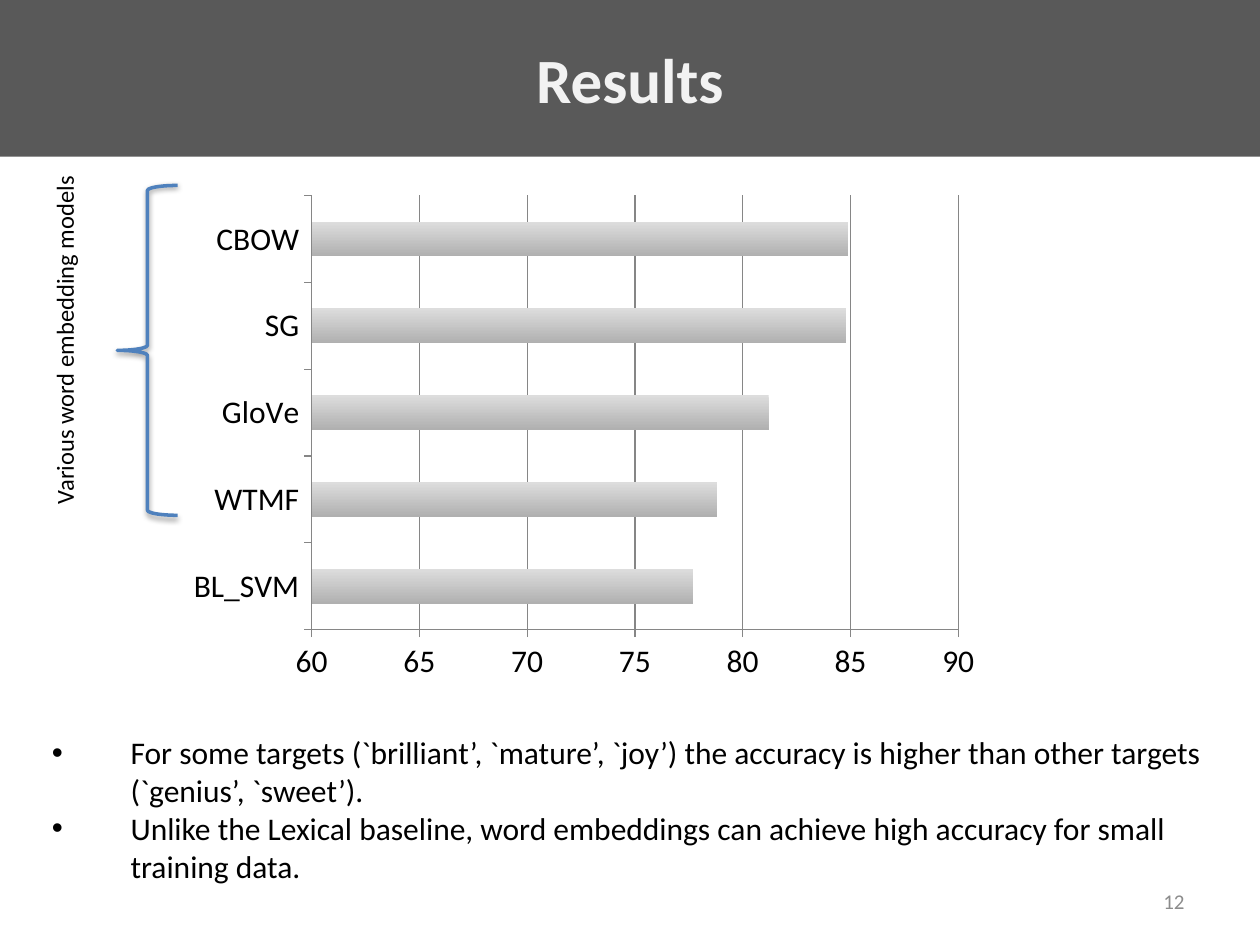
from lxml.etree import SubElement
from pptx import Presentation
from pptx.chart.data import CategoryChartData
from pptx.dml.color import RGBColor
from pptx.enum.chart import XL_CHART_TYPE as CHART, XL_TICK_MARK as TICK
from pptx.enum.shapes import MSO_SHAPE as SHAPE
from pptx.enum.text import MSO_ANCHOR as ANCHOR, PP_ALIGN as ALIGN
from pptx.oxml.ns import qn
from pptx.util import Pt

FONT = "Calibri"
COLORS = {
    "banner": "595959", "title": "F2F2F2", "text": "000000", "number": "8C8C8C",
    "brace": "4F81BD", "axis": "868686", "bar_top": "DDDDDD", "bar_bottom": "B0B0B0",
}
ACCURACY = {"BL_SVM": 77.7, "WTMF": 78.8, "GloVe": 81.2, "SG": 84.8, "CBOW": 84.9}
FINDINGS = [
    "For some targets (`brilliant’, `mature’, `joy’) the accuracy is higher "
    "than other targets (`genius’, `sweet’).",
    "Unlike the Lexical baseline, word embeddings can achieve high accuracy "
    "for small training data.",
]


def rgb(name):
    return RGBColor.from_string(COLORS[name])


def box(*lengths):
    return [Pt(v) for v in lengths]


def style(font, size, color, bold=False):
    font.name, font.size, font.bold = FONT, Pt(size), bold
    font.color.rgb = rgb(color)


def write(sp, lines, size, color, align=ALIGN.LEFT, anchor=ANCHOR.TOP, bold=False, wrap=True):
    tf = sp.text_frame
    tf.text = "\n".join(lines)
    tf.word_wrap, tf.vertical_anchor = wrap, anchor
    for p in tf.paragraphs:
        p.alignment = align
        for r in p.runs:
            style(r.font, size, color, bold)


def add_text(s, at, lines, size, color, **options):
    sp = s.shapes.add_textbox(*box(*at))
    write(sp, lines, size, color, **options)
    return sp


def add_banner(s, text):
    sp = s.shapes.add_shape(SHAPE.RECTANGLE, *box(0, -0.5, 720, 90))
    sp.shadow.inherit = False
    sp.fill.solid()
    sp.fill.fore_color.rgb = rgb("banner")
    sp.line.fill.background()
    write(sp, [text], 36, "title", ALIGN.CENTER, ANCHOR.MIDDLE, bold=True)


def add_brace(s, at):
    """Left brace with a soft shadow below it."""
    sp = s.shapes.add_shape(SHAPE.LEFT_BRACE, *box(*at))
    sp.fill.background()
    sp.line.color.rgb = rgb("brace")
    sp.line.width = Pt(2)
    sp.shadow.inherit = False
    effects = sp._element.spPr.find(qn("a:effectLst"))
    shadow = SubElement(effects, qn("a:outerShdw"), blurRad=str(Pt(3.1)),
                        dist=str(Pt(1.6)), dir="5400000", rotWithShape="0")
    color = SubElement(shadow, qn("a:srgbClr"), val=COLORS["text"])
    SubElement(color, qn("a:alpha"), val="38000")


def add_bar_chart(s, at):
    data = CategoryChartData()
    data.categories = list(ACCURACY)
    data.add_series("Series 1", list(ACCURACY.values()))
    chart = s.shapes.add_chart(CHART.BAR_CLUSTERED, *box(*at), data).chart
    chart.has_legend = chart.has_title = False
    style(chart.font, 18, "text")

    values = chart.value_axis
    values.minimum_scale, values.maximum_scale, values.major_unit = 60, 90, 5
    values.has_major_gridlines = True
    for axis in (chart.category_axis, values):
        axis.major_tick_mark = TICK.OUTSIDE
    for part in (chart.category_axis, values, values.major_gridlines):
        part.format.line.color.rgb = rgb("axis")
        part.format.line.width = Pt(0.75)

    plot = chart.plots[0]
    plot.gap_width, plot.vary_by_categories = 150, False
    fill = plot.series[0].format.fill
    fill.gradient()
    fill.gradient_angle = 270
    for stop, name in zip(fill.gradient_stops, ("bar_top", "bar_bottom")):
        stop.color.rgb = rgb(name)


def add_bullets(s, at, lines):
    sp = add_text(s, at, lines, 18, "text")
    for p in sp.text_frame.paragraphs:
        pPr = p._p.get_or_add_pPr()
        pPr.set("marL", str(Pt(45)))
        pPr.set("indent", str(Pt(-45)))
        SubElement(pPr, qn("a:buFont"), typeface="Arial")
        SubElement(pPr, qn("a:buChar"), char="•")


def main():
    prs = Presentation()
    prs.slide_width, prs.slide_height = Pt(720), Pt(540)
    s = prs.slides.add_slide(prs.slide_layouts[6])
    add_banner(s, "Results")
    add_text(s, (516, 500.5, 168, 28.75), ["12"], 12, "number",
             align=ALIGN.RIGHT, anchor=ANCHOR.MIDDLE)
    add_bar_chart(s, (101.5, 106, 464.5, 288.5))
    add_brace(s, (67, 106, 34.5, 188.5))
    label = add_text(s, (-65.5, 180.75, 204.5, 24.25), ["Various word embedding models"],
                     14, "text", wrap=False)
    label.rotation = 270
    add_bullets(s, (22.5, 415.5, 685.5, 116.5), FINDINGS)
    prs.save("out.pptx")


if __name__ == "__main__":
    main()
